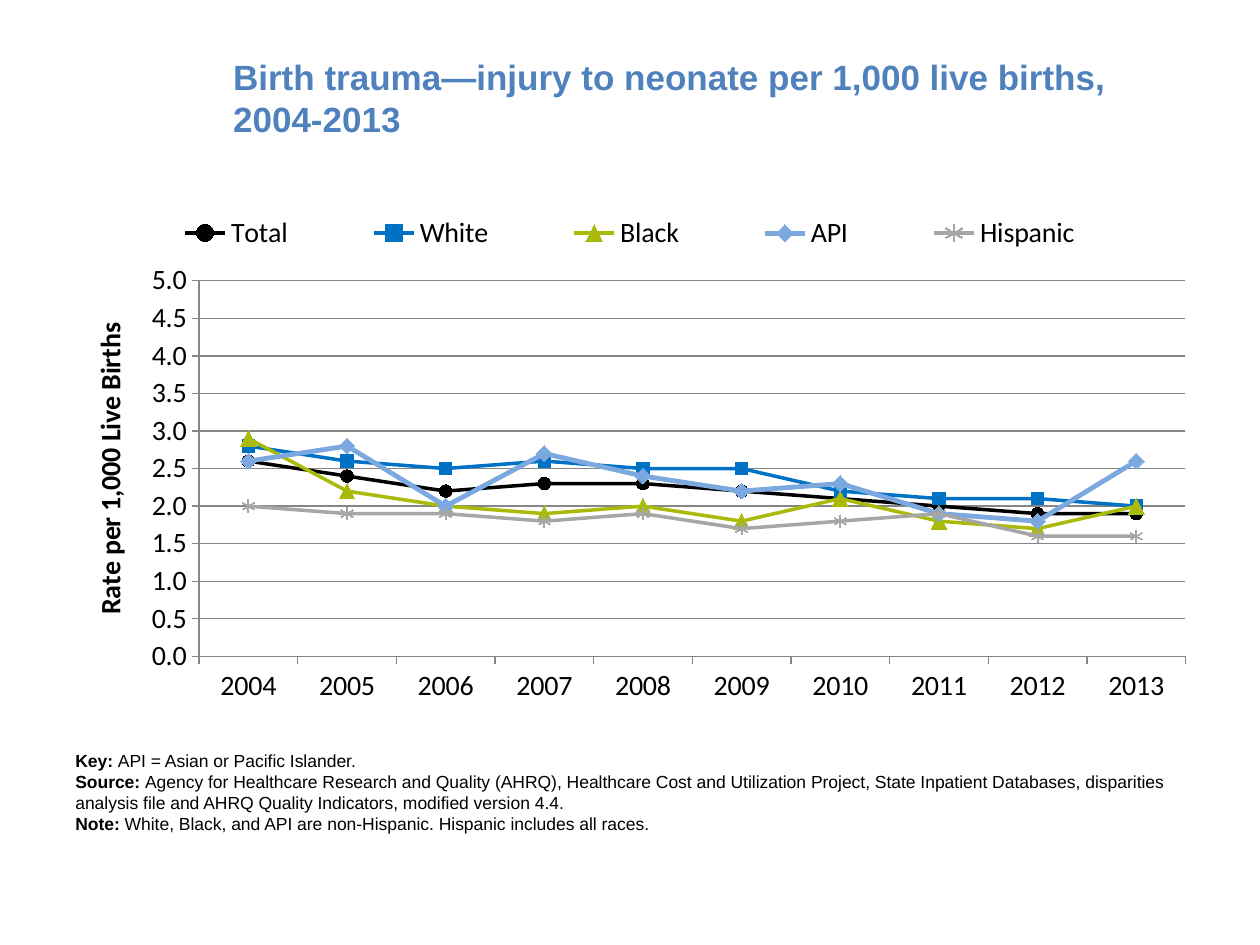
from dataclasses import dataclass

from lxml.etree import SubElement
from pptx import Presentation
from pptx.chart.data import CategoryChartData
from pptx.dml.color import RGBColor
from pptx.enum.chart import XL_CHART_TYPE, XL_LEGEND_POSITION, XL_MARKER_STYLE, XL_TICK_MARK
from pptx.enum.text import MSO_ANCHOR
from pptx.oxml import parse_xml
from pptx.oxml.ns import nsdecls, qn
from pptx.util import Cm, Pt


@dataclass(frozen=True)
class Theme:
    heading: RGBColor = RGBColor(0x4F, 0x81, 0xBD)
    text: RGBColor = RGBColor(0, 0, 0)
    grid: RGBColor = RGBColor(0x86, 0x86, 0x86)
    text_font: str = "Arial"
    chart_font: str = "Calibri"
    heading_size: Pt = Pt(20)
    chart_size: Pt = Pt(16)
    note_size: Pt = Pt(10)


THEME = Theme()
YEARS = [str(year) for year in range(2004, 2014)]
# name, colour, line width, marker style, marker size, rates
GROUPS = [
    ("Total", "000000", 2, XL_MARKER_STYLE.CIRCLE, 7,
     [2.6, 2.4, 2.2, 2.3, 2.3, 2.2, 2.1, 2.0, 1.9, 1.9]),
    ("White", "0072C6", 2, XL_MARKER_STYLE.SQUARE, 7,
     [2.8, 2.6, 2.5, 2.6, 2.5, 2.5, 2.2, 2.1, 2.1, 2.0]),
    ("Black", "AABA0A", 2, XL_MARKER_STYLE.TRIANGLE, 9,
     [2.9, 2.2, 2.0, 1.9, 2.0, 1.8, 2.1, 1.8, 1.7, 2.0]),
    ("API", "7BA8DF", 2.75, XL_MARKER_STYLE.DIAMOND, 9,
     [2.6, 2.8, 2.0, 2.7, 2.4, 2.2, 2.3, 1.9, 1.8, 2.6]),
    ("Hispanic", "A6A6A6", 2, XL_MARKER_STYLE.STAR, 7,
     [2.0, 1.9, 1.9, 1.8, 1.9, 1.7, 1.8, 1.9, 1.6, 1.6]),
]
NOTES = [
    ("Key: ", "API = Asian or Pacific Islander."),
    ("Source: ", "Agency for Healthcare Research and Quality (AHRQ), Healthcare Cost and "
     "Utilization Project, State Inpatient Databases, disparities analysis file and AHRQ "
     "Quality Indicators, modified version 4.4."),
    ("Note: ", "White, Black, and API are non-Hispanic. Hispanic includes all races."),
]


def style_font(font, size, name, color=THEME.text, bold=False):
    font.size, font.name, font.bold = size, name, bold
    font.color.rgb = color


def style_chart_font(font, bold=False):
    style_font(font, THEME.chart_size, THEME.chart_font, bold=bold)


def add_text_box(page, box, anchor):
    frame = page.shapes.add_textbox(*box).text_frame
    frame.word_wrap = True
    frame.vertical_anchor = anchor
    return frame


def add_heading(page, box, text):
    frame = add_text_box(page, box, MSO_ANCHOR.MIDDLE)
    frame.text = text
    style_font(frame.paragraphs[0].runs[0].font, THEME.heading_size,
               THEME.text_font, THEME.heading, True)


def add_notes(page, box, notes):
    frame = add_text_box(page, box, MSO_ANCHOR.TOP)
    for index, note in enumerate(notes):
        para = frame.add_paragraph() if index else frame.paragraphs[0]
        for text, bold in zip(note, (True, False)):
            span = para.add_run()
            span.text = text
            style_font(span.font, THEME.note_size, THEME.text_font, bold=bold)


def set_layout(element, position, inner=False, **fractions):
    """Place a chart part by fractions of the chart; position is its child index."""
    for old in element.findall(qn("c:layout")):
        element.remove(old)
    layout = parse_xml(f"<c:layout {nsdecls('c')}><c:manualLayout/></c:layout>")
    manual = layout[0]
    if inner:
        SubElement(manual, qn("c:layoutTarget")).set("val", "inner")
    for key in ("x", "y"):
        SubElement(manual, qn(f"c:{key}Mode")).set("val", "edge")
    for key, value in fractions.items():
        SubElement(manual, qn(f"c:{key}")).set("val", str(value))
    element.insert(position, layout)


def style_series(series, color, width, marker_style, marker_size):
    series.smooth = False
    series.format.line.color.rgb = color
    series.format.line.width = Pt(width)
    marker = series.marker
    marker.style, marker.size = marker_style, marker_size
    marker.format.line.color.rgb = color
    if marker_style == XL_MARKER_STYLE.STAR:
        marker.format.fill.background()
    else:
        marker.format.fill.solid()
        marker.format.fill.fore_color.rgb = color


def style_axes(chart):
    for axis in (chart.category_axis, chart.value_axis):
        style_chart_font(axis.tick_labels.font)
        axis.major_tick_mark = XL_TICK_MARK.OUTSIDE
        axis.minor_tick_mark = XL_TICK_MARK.NONE
        axis.format.line.color.rgb = THEME.grid
    rates = chart.value_axis
    rates.minimum_scale, rates.maximum_scale, rates.major_unit = 0, 5, 0.5
    rates.tick_labels.number_format = "0.0"
    rates.tick_labels.number_format_is_linked = False
    rates.has_major_gridlines = True
    rates.major_gridlines.format.line.color.rgb = THEME.grid
    title = rates.axis_title
    title.text_frame.text = "Rate per 1,000 Live Births"
    style_chart_font(title.text_frame.paragraphs[0].runs[0].font, True)
    title.text_frame._txBody.bodyPr.set("rot", "-5400000")
    set_layout(title._element, 1, x=0.02, y=0.22)


def add_rate_chart(page, box):
    data = CategoryChartData(number_format="0.0")
    data.categories = YEARS
    for name, *_, rates in GROUPS:
        data.add_series(name, rates)
    chart = page.shapes.add_chart(XL_CHART_TYPE.LINE_MARKERS, *box, data).chart
    style_font(chart.font, THEME.note_size, THEME.text_font)
    chart.has_title = False
    chart.plots[0].vary_by_categories = False
    for series, (_, color, *look, _) in zip(chart.series, GROUPS):
        style_series(series, RGBColor.from_string(color), *look)
    style_axes(chart)
    chart.has_legend = True
    legend = chart.legend
    legend.position = XL_LEGEND_POSITION.TOP
    legend.include_in_layout = False
    style_chart_font(legend.font)
    set_layout(legend._element, 1, x=0.04, y=0.01, w=0.92, h=0.1)
    plot_area = chart._chartSpace.find(".//" + qn("c:plotArea"))
    set_layout(plot_area, 0, inner=True, x=0.12, y=0.15, w=0.87, h=0.71)


def main():
    deck = Presentation()
    deck.slide_width, deck.slide_height = Cm(25.4), Cm(19.05)
    page = deck.slides.add_slide(deck.slide_layouts[6])
    left, width = Cm(1.27), Cm(22.86)
    add_heading(page, (Cm(4.45), Cm(0.76), Cm(19.69), Cm(2.41)),
                "Birth trauma—injury to neonate per 1,000 live births, 2004-2013")
    add_rate_chart(page, (left, Cm(4.06), width, Cm(10.67)))
    add_notes(page, (left, Cm(14.99), width, Cm(1.96)), NOTES)
    deck.save("out.pptx")


if __name__ == "__main__":
    main()
